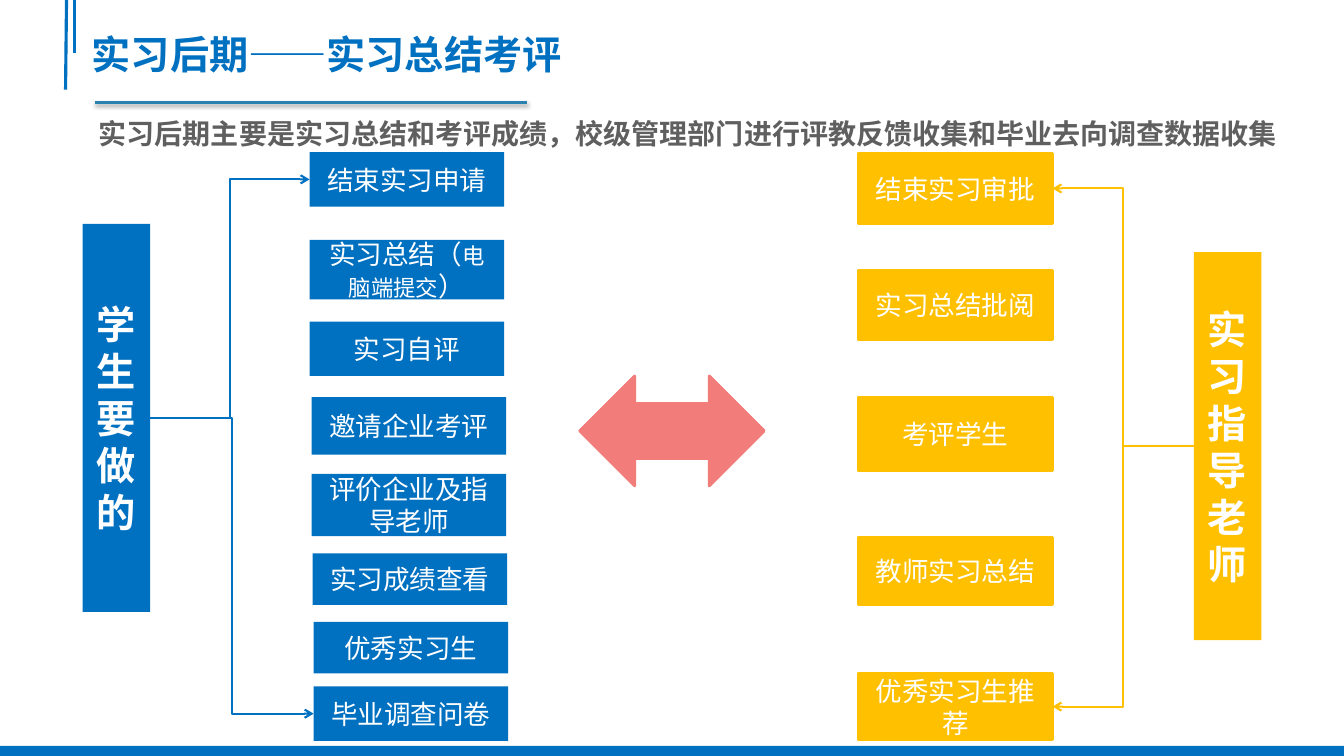
from lxml import etree
from pptx import Presentation
from pptx import util as u
from pptx.dml.color import RGBColor
from pptx.enum import shapes, text
from pptx.oxml.ns import qn

PX = 9144
BLUE, GOLD, CORAL = "0070C0", "FFC000", "F17C79"
TEAL, GREY, WHITE = "2A82B0", "5F5F5F", "FFFFFF"
HEADING_FONT, BOX_FONT = "Noto Sans CJK SC", "DejaVu Sans"


def color(value):
    return RGBColor.from_string(value)


class Board:
    def __init__(self, slide):
        self.slide = slide

    def add_runs(self, paragraph, parts, font, ink, bold=False):
        for words, size in parts:
            run = paragraph.add_run()
            run.text = words
            run.font.size = u.Pt(size)
            run.font.bold = bold
            run.font.color.rgb = color(ink)
            run.font.name = font
            east_asian = etree.SubElement(run.font._element, qn("a:ea"))
            east_asian.set("typeface", font)

    def label(self, area, words, size, ink, align, insets, spacing=None):
        shape = self.slide.shapes.add_textbox(*(n * PX for n in area))
        frame = shape.text_frame
        frame.word_wrap = True
        frame.margin_left, frame.margin_top, frame.margin_right, frame.margin_bottom = (
            n * PX for n in insets)
        paragraph = frame.paragraphs[0]
        paragraph.alignment = align
        if spacing:
            paragraph.line_spacing = spacing
        self.add_runs(paragraph, [(words, size)], HEADING_FONT, ink, True)

    def block(self, area, fill, parts=(), bold=False, outlined=False,
              kind=shapes.MSO_SHAPE.RECTANGLE):
        shape = self.slide.shapes.add_shape(kind, *(n * PX for n in area))
        shape.shadow.inherit = False
        shape.fill.solid()
        shape.fill.fore_color.rgb = color(fill)
        if outlined:
            shape.line.color.rgb = color(fill)
            shape.line.width = u.Pt(2)
        else:
            shape.line.fill.background()
        frame = shape.text_frame
        frame.word_wrap = True
        frame.vertical_anchor = text.MSO_ANCHOR.MIDDLE
        paragraph = frame.paragraphs[0]
        paragraph.alignment = text.PP_ALIGN.CENTER
        self.add_runs(paragraph, parts, BOX_FONT, WHITE, bold)
        return shape

    def line(self, ends, ink, width, kind=shapes.MSO_CONNECTOR.STRAIGHT):
        connector = self.slide.shapes.add_connector(kind, *(n * PX for n in ends))
        connector.line.color.rgb = color(ink)
        connector.line.width = u.Pt(width)
        effects = etree.SubElement(connector._element.spPr, qn("a:effectLst"))
        return connector, effects

    def shadowed_line(self, ends, ink, width):
        effects = self.line(ends, ink, width)[1]
        shadow = etree.SubElement(effects, qn("a:outerShdw"), blurRad="39370",
                                  dist="20320", dir="5400000", rotWithShape="0")
        black = etree.SubElement(shadow, qn("a:srgbClr"), val="000000")
        etree.SubElement(black, qn("a:alpha"), val="38000")

    def elbow(self, start, start_side, end, end_side, ink):
        connector = self.line((0, 0, 0, 0), ink, 1.5, shapes.MSO_CONNECTOR.ELBOW)[0]
        connector.begin_connect(start, start_side)
        connector.end_connect(end, end_side)
        outline = connector._element.spPr.find(qn("a:ln"))
        etree.SubElement(outline, qn("a:tailEnd"), type="arrow")


STUDENT_STEPS = [
    (307, 151, 54, [("结束实习申请", 19)]),
    (307, 238, 59, [("实习总结（", 19), ("电脑端提交", 16), ("）", 19)]),
    (307, 319, 54, [("实习自评", 19)]),
    (309, 394, 57, [("邀请企业考评", 19)]),
    (309, 470, 62, [("评价企业及指导老师", 19)]),
    (310, 549, 51, [("实习成绩查看", 19)]),
    (311, 617, 51, [("优秀实习生", 19)]),
    (311, 681, 54, [("毕业调查问卷", 19)]),
]
TEACHER_STEPS = [
    (851, 152, 70, [("结束实习审批", 19)]),
    (851, 268, 69, [("实习总结批阅", 19)]),
    (851, 394, 73, [("考评学生", 19)]),
    (851, 533, 67, [("教师实习总结", 19)]),
    (851, 668, 66, [("优秀实习生推荐", 19)]),
]
STEP_WIDTH = 193


def main():
    presentation = Presentation()
    presentation.slide_width = u.Inches(13.33)
    presentation.slide_height = u.Inches(7.5)
    board = Board(presentation.slides.add_slide(presentation.slide_layouts[6]))

    board.label((68, 28, 1201, 84), "实习后期——实习总结考评", 28, BLUE,
                text.PP_ALIGN.LEFT, (23, 7, 13, 7), 0.9)
    board.line((66, 0, 65, 89), BLUE, 2.25)
    board.line((74, 0, 74, 53), BLUE, 2.25)
    board.block((0, 740, 1333, 10), BLUE)
    board.shadowed_line((94, 102, 523, 102), TEAL, 2)
    board.label((65, 111, 1235, 44),
                "实习后期主要是实习总结和考评成绩，校级管理部门进行评教反馈收集和毕业去向调查数据收集",
                20, GREY, text.PP_ALIGN.CENTER, (10, 5, 10, 5))

    columns = [
        ((82, 222, 67, 385), "学生要做的", BLUE, STUDENT_STEPS, False, 3, 1),
        ((1184, 250, 67, 385), "实习指导老师", GOLD, TEACHER_STEPS, True, 1, 3),
    ]
    for area, role, fill, steps, outlined, role_side, step_side in columns:
        role_block = board.block(area, fill, [(role, 28)], bold=True)
        step_blocks = [board.block((left, top, STEP_WIDTH, height), fill, parts,
                                   outlined=outlined)
                       for left, top, height, parts in steps]
        for step_block in (step_blocks[0], step_blocks[-1]):
            board.elbow(role_block, role_side, step_block, step_side, fill)

    board.block((575, 373, 183, 109), CORAL, outlined=True,
                kind=shapes.MSO_SHAPE.LEFT_RIGHT_ARROW)
    presentation.save("out.pptx")


if __name__ == "__main__":
    main()
